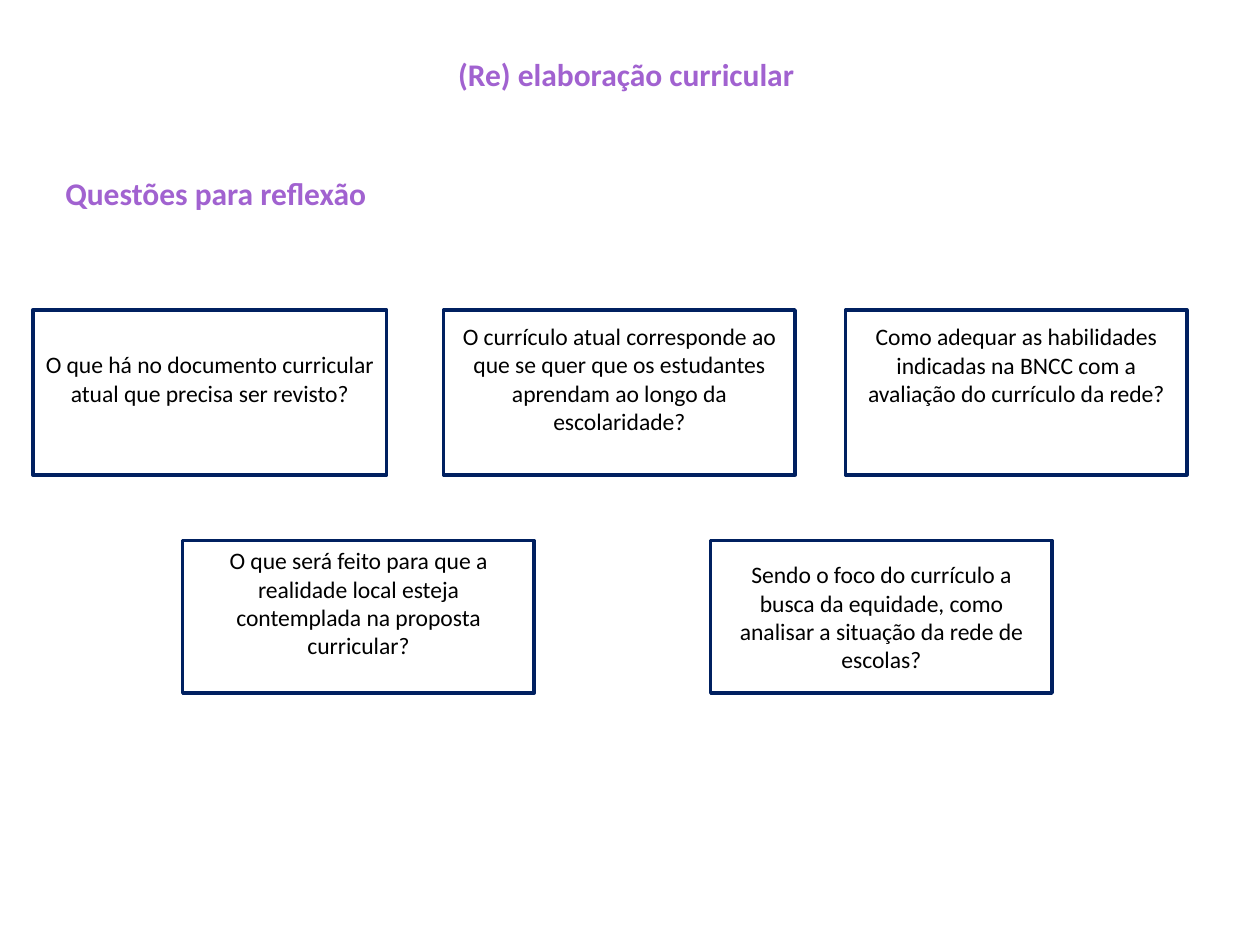
from pptx import Presentation
from pptx.dml.color import RGBColor
from pptx.enum.shapes import MSO_SHAPE
from pptx.enum.text import MSO_ANCHOR, PP_ALIGN
from pptx.util import Inches, Pt

THEME = {
    "font": "Calibri",
    "heading": RGBColor(0xA1, 0x62, 0xD0),
    "text": RGBColor(0, 0, 0),
    "fill": RGBColor(0xFF, 0xFF, 0xFF),
    "border": RGBColor(0x00, 0x20, 0x60),
    "heading_size": Pt(18),
    "text_size": Pt(13.5),
    "border_width": Pt(2),
}
LINE_HEIGHT = 0.22
INSET = 0.05
SIDE_INSET = 0.1

TITLE = "(Re) elaboração curricular"
SUBTITLE = "Questões para reflexão"

# Each row: top, height, then questions as (left, width, lines kept free below, text)
QUESTION_ROWS = [
    (2.46, 1.31, [
        (0.26, 2.81, 1, "O que há no documento curricular atual que precisa ser revisto?"),
        (3.52, 2.79, 1, "O currículo atual corresponde ao que se quer que os estudantes "
                        "aprendam ao longo da escolaridade?"),
        (6.71, 2.71, 2, "Como adequar as habilidades indicadas na BNCC com a avaliação "
                        "do currículo da rede?"),
    ]),
    (4.29, 1.21, [
        (1.45, 2.79, 1, "O que será feito para que a realidade local esteja contemplada "
                        "na proposta curricular?"),
        (5.64, 2.71, 0, "Sendo o foco do currículo a busca da equidade, como analisar a "
                        "situação da rede de escolas?"),
    ]),
]


def write_text(shape, text, *, size, color, bold=False, align=PP_ALIGN.CENTER,
               anchor=MSO_ANCHOR.MIDDLE, space_right=0, space_below=0):
    frame = shape.text_frame
    frame.word_wrap = True
    frame.vertical_anchor = anchor
    frame.margin_left = Inches(SIDE_INSET)
    frame.margin_right = Inches(SIDE_INSET + space_right)
    frame.margin_top = Inches(INSET)
    frame.margin_bottom = Inches(INSET + space_below)
    para = frame.paragraphs[0]
    para.alignment = align
    span = para.add_run()
    span.text = text
    span.font.name = THEME["font"]
    span.font.size = size
    span.font.bold = bold
    span.font.color.rgb = color


def add_question(page, left, top, width, height, free_lines, text):
    box = page.shapes.add_shape(MSO_SHAPE.RECTANGLE, Inches(left), Inches(top),
                                Inches(width), Inches(height))
    box.shadow.inherit = False
    box.fill.solid()
    box.fill.fore_color.rgb = THEME["fill"]
    box.line.color.rgb = THEME["border"]
    box.line.width = THEME["border_width"]
    write_text(box, text, size=THEME["text_size"], color=THEME["text"],
               space_below=free_lines * LINE_HEIGHT)


def main():
    deck = Presentation()
    deck.slide_width, deck.slide_height = Inches(10), Inches(7.5)
    page = deck.slides.add_slide(deck.slide_layouts[5])
    heading = {"size": THEME["heading_size"], "color": THEME["heading"], "bold": True}

    title = page.shapes.title
    title.left, title.top = Inches(0.5), Inches(0.3)
    title.width, title.height = Inches(9), Inches(1.25)
    write_text(title, TITLE, space_right=0.06, space_below=0.67, **heading)

    subtitle = page.shapes.add_textbox(Inches(0.42), Inches(1.33),
                                       Inches(7.97), Inches(1.31))
    write_text(subtitle, SUBTITLE, align=PP_ALIGN.LEFT, anchor=MSO_ANCHOR.TOP, **heading)

    for top, height, questions in QUESTION_ROWS:
        for left, width, free_lines, text in questions:
            add_question(page, left, top, width, height, free_lines, text)

    deck.save("out.pptx")


if __name__ == "__main__":
    main()
